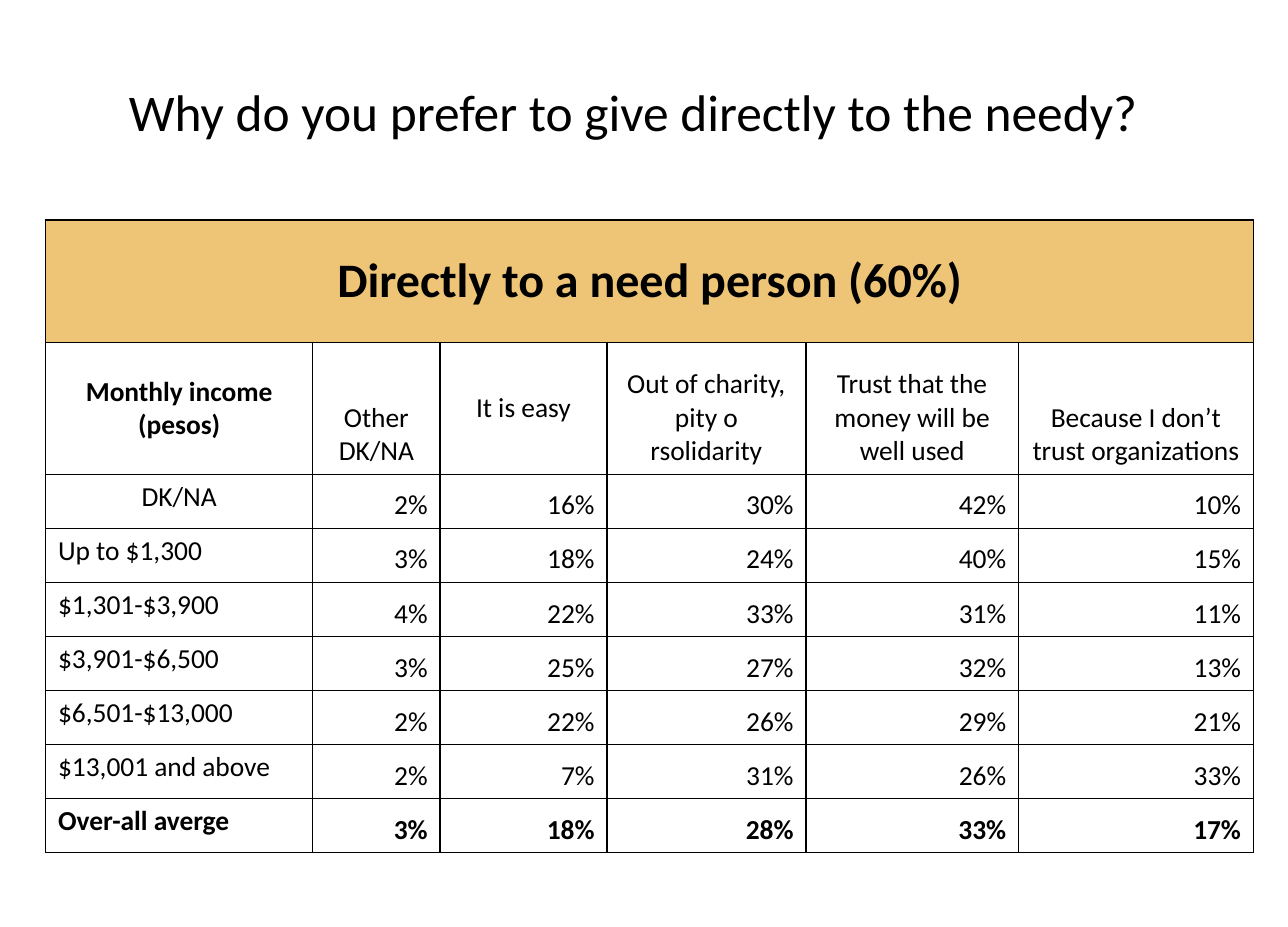
from dataclasses import dataclass

from lxml import etree
from pptx import Presentation
from pptx.dml.color import RGBColor
from pptx.enum.text import MSO_ANCHOR, PP_ALIGN
from pptx.oxml.ns import qn
from pptx.util import Inches, Pt

LEFT, CENTER, RIGHT = PP_ALIGN.LEFT, PP_ALIGN.CENTER, PP_ALIGN.RIGHT
TOP, MIDDLE, BOTTOM = MSO_ANCHOR.TOP, MSO_ANCHOR.MIDDLE, MSO_ANCHOR.BOTTOM


@dataclass(frozen=True)
class Theme:
    font: str = "Calibri"
    ink: str = "000000"
    banner: str = "EEC577"
    title_size: int = 30
    banner_size: int = 28
    body_size: int = 16
    border: int = 1


THEME = Theme()

TITLE = "Why do you prefer to give directly to the needy?"
BANNER = "Directly to a need person (60%)"
HEADINGS = [
    "Monthly income (pesos)",
    "Other DK/NA",
    "It is easy",
    "Out of charity, pity o rsolidarity",
    "Trust that the money will be well used",
    "Because I don’t trust organizations",
]
ANSWERS = [
    ("DK/NA", 2, 16, 30, 42, 10),
    ("Up to $1,300", 3, 18, 24, 40, 15),
    ("$1,301-$3,900", 4, 22, 33, 31, 11),
    ("$3,901-$6,500", 3, 25, 27, 32, 13),
    ("$6,501-$13,000", 2, 22, 26, 29, 21),
    ("$13,001 and above", 2, 7, 31, 26, 33),
    ("Over-all averge", 3, 18, 28, 33, 17),
]
COLUMN_WIDTHS = [2.16, 1.03, 1.35, 1.61, 1.72, 1.9]
BANNER_HEIGHT, HEADING_HEIGHT, TABLE_HEIGHT = 0.99, 1.07, 5.12


def write(tf, text, size, align, bold=False):
    tf.text = text
    p = tf.paragraphs[0]
    p.alignment = align
    font = p.runs[0].font
    font.name = THEME.font
    font.size = Pt(size)
    font.bold = bold
    font.color.rgb = RGBColor.from_string(THEME.ink)


def add_title(slide):
    sp = slide.shapes.add_textbox(Inches(0.37), Inches(0.6), Inches(9.51), Inches(1.25))
    sp.text_frame.word_wrap = True
    write(sp.text_frame, TITLE, THEME.title_size, CENTER)


def set_borders(cell):
    properties = cell._tc.get_or_add_tcPr()
    for side in ("a:lnL", "a:lnR", "a:lnT", "a:lnB"):
        line = etree.SubElement(properties, qn(side), w=str(Pt(THEME.border)))
        fill = etree.SubElement(line, qn("a:solidFill"))
        etree.SubElement(fill, qn("a:srgbClr"), val=THEME.ink)


def fill_cell(cell, text, align, anchor, bold=False, size=THEME.body_size):
    write(cell.text_frame, text, size, align, bold)
    cell.vertical_anchor = anchor


def add_empty_table(slide):
    """Add the bordered, unfilled grid with its row and column sizes."""
    rows = len(ANSWERS) + 2
    frame = slide.shapes.add_table(
        rows, len(HEADINGS), Inches(0.37), Inches(1.78),
        Inches(sum(COLUMN_WIDTHS)), Inches(TABLE_HEIGHT))
    table = frame.table
    table.first_row = table.horz_banding = False
    for column, width in zip(table.columns, COLUMN_WIDTHS):
        column.width = Inches(width)
    answer_height = (TABLE_HEIGHT - BANNER_HEIGHT - HEADING_HEIGHT) / len(ANSWERS)
    heights = [BANNER_HEIGHT, HEADING_HEIGHT] + [answer_height] * len(ANSWERS)
    for row, height in zip(table.rows, heights):
        row.height = Inches(height)
        for cell in row.cells:
            set_borders(cell)
            cell.fill.background()
    return table


def add_reasons_table(slide):
    table = add_empty_table(slide)

    banner = table.cell(0, 0)
    banner.merge(table.cell(0, len(HEADINGS) - 1))
    banner.fill.solid()
    banner.fill.fore_color.rgb = RGBColor.from_string(THEME.banner)
    fill_cell(banner, BANNER, CENTER, MIDDLE, True, THEME.banner_size)

    for col, heading in enumerate(HEADINGS):
        anchor = MIDDLE if col in (0, 2) else BOTTOM
        fill_cell(table.cell(1, col), heading, CENTER, anchor, bold=col == 0)

    for row, (income, *shares) in enumerate(ANSWERS, start=2):
        bold = row == len(ANSWERS) + 1
        align = CENTER if row == 2 else LEFT
        fill_cell(table.cell(row, 0), income, align, TOP, bold)
        for col, share in enumerate(shares, start=1):
            fill_cell(table.cell(row, col), f"{share}%", RIGHT, BOTTOM, bold)


def main():
    prs = Presentation()
    prs.slide_width, prs.slide_height = Inches(10.42), Inches(7.5)
    slide = prs.slides.add_slide(prs.slide_layouts[6])
    add_reasons_table(slide)
    add_title(slide)
    prs.save("out.pptx")


if __name__ == "__main__":
    main()
